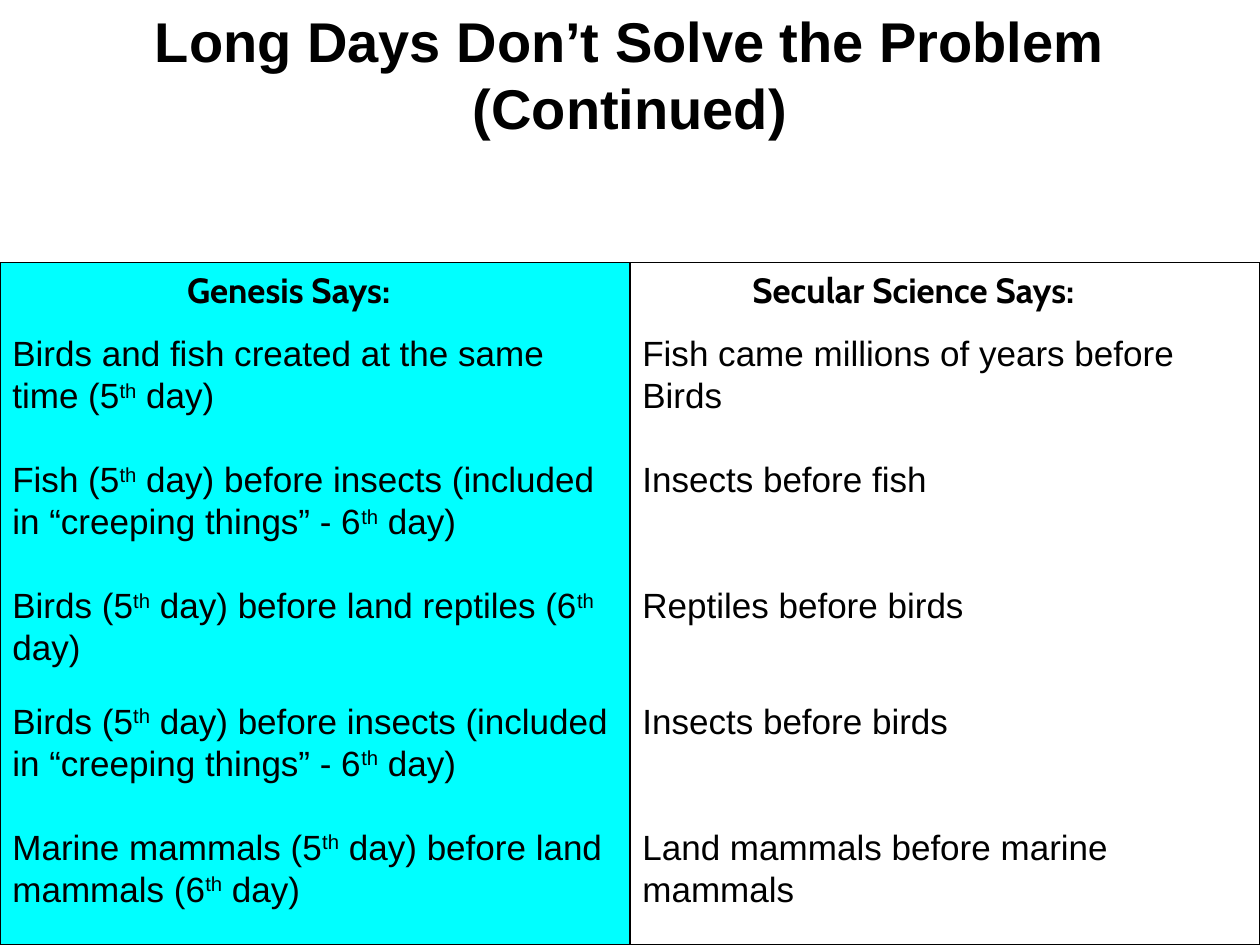
"""Build a slide that contrasts the Genesis order with the secular one."""
from pptx import Presentation
from pptx.dml.color import RGBColor
from pptx.enum.shapes import MSO_SHAPE as Shape
from pptx.enum.text import MSO_ANCHOR as Anchor, PP_ALIGN as Align
from pptx.util import Cm, Pt

BLACK = RGBColor(0, 0, 0)
WHITE = RGBColor(255, 255, 255)
CYAN = RGBColor(0, 255, 255)

HALF = 12.7
TOP = 5.29
ROWS = [
    (6.56, "Birds and fish created at the same time (5^th^ day)",
     "Fish came millions of years before Birds"),
    (9.1, "Fish (5^th^ day) before insects (included in “creeping things” - 6^th^ day)",
     "Insects before fish"),
    (11.64, "Birds (5^th^ day) before land reptiles (6^th^ day)",
     "Reptiles before birds"),
    (13.97, "Birds (5^th^ day) before insects (included in “creeping things” - 6^th^ day)",
     "Insects before birds"),
    (16.51, "Marine mammals (5^th^ day) before land mammals (6^th^ day)",
     "Land mammals before marine mammals"),
]


def add_panel(slide, left, fill):
    """Draw one outlined column background."""
    panel = slide.shapes.add_shape(
        Shape.RECTANGLE, Cm(left), Cm(TOP), Cm(HALF), Cm(19.05 - TOP))
    panel.shadow.inherit = False
    panel.fill.solid()
    panel.fill.fore_color.rgb = fill
    panel.line.color.rgb = BLACK
    panel.line.width = Pt(0.75)


def add_text(slide, text, left, top, width, height, size=20, face="Arial",
             bold=False, align=Align.LEFT, anchor=Anchor.TOP):
    """Add a text box; parts between carets are set as superscript."""
    box = slide.shapes.add_textbox(Cm(left), Cm(top), Cm(width), Cm(height))
    frame = box.text_frame
    frame.word_wrap = True
    frame.vertical_anchor = anchor
    para = frame.paragraphs[0]
    para.alignment = align
    for index, part in enumerate(text.split("^")):
        run = para.add_run()
        run.text = part
        font = run.font
        font.size, font.name, font.bold = Pt(size), face, bold
        font.color.rgb = BLACK
        if index % 2:
            run._r.get_or_add_rPr().set("baseline", "30000")


def add_head(slide, text, left, width):
    """Add a bold column heading."""
    add_text(slide, text, left, TOP, width, 1.1, face="Cabin",
             bold=True, align=Align.CENTER)


def main():
    """Build and save the slide."""
    deck = Presentation()
    deck.slide_width, deck.slide_height = Cm(2 * HALF), Cm(19.05)
    slide = deck.slides.add_slide(deck.slide_layouts[6])
    add_panel(slide, 0, CYAN)
    add_panel(slide, HALF, WHITE)
    add_text(slide, "Long Days Don’t Solve the Problem (Continued)",
             1.9, 0.42, 21.6, 2.12, size=32, bold=True,
             align=Align.CENTER, anchor=Anchor.MIDDLE)
    add_head(slide, "Genesis Says:", 0, 11.64)
    add_head(slide, "Secular Science Says:", HALF, 11.43)
    for top, *pair in ROWS:
        for col, text in enumerate(pair):
            add_text(slide, text, col * HALF, top, HALF, 1.96)
    deck.save("out.pptx")


if __name__ == "__main__":
    main()
